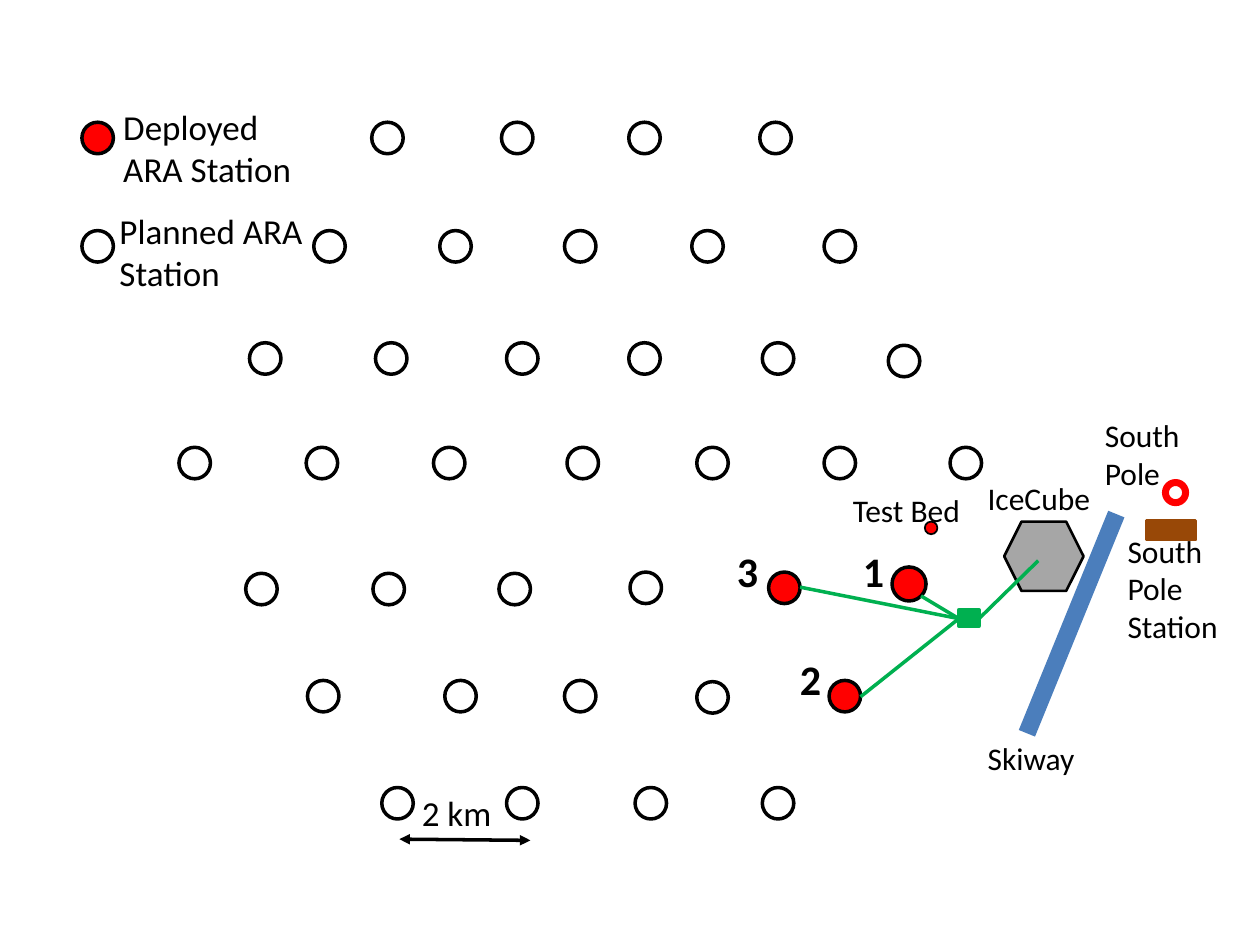
from dataclasses import dataclass

from lxml.etree import SubElement
from pptx import Presentation
from pptx.dml.color import RGBColor
from pptx.enum.shapes import MSO_CONNECTOR, MSO_SHAPE
from pptx.enum.text import MSO_AUTO_SIZE
from pptx.oxml.ns import qn
from pptx.slide import Slide
from pptx.util import Inches, Pt

BLACK = RGBColor(0x00, 0x00, 0x00)
RED = RGBColor(0xFF, 0x00, 0x00)
GREEN = RGBColor(0x00, 0xB0, 0x50)
BLUE = RGBColor(0x4B, 0x7E, 0xBC)
GREY = RGBColor(0xA6, 0xA6, 0xA6)
BROWN = RGBColor(0x98, 0x48, 0x07)

FONT = "Calibri"
STATION_SIZE = 0.25


@dataclass(frozen=True)
class StationRow:
    top: float
    lefts: tuple[float, ...]


@dataclass(frozen=True)
class Marker:
    kind: MSO_SHAPE
    left: float
    top: float
    width: float
    height: float
    fill: RGBColor | None = None
    line: RGBColor = BLACK
    weight: float = 2


@dataclass(frozen=True)
class Link:
    start: tuple[float, float]
    end: tuple[float, float]
    color: RGBColor = GREEN
    weight: float = 2
    arrows: bool = False


@dataclass(frozen=True)
class Label:
    text: str
    left: float
    top: float
    width: float
    height: float
    size: int = 18
    bold: bool = False


PLANNED_ROWS = (
    StationRow(0.97, (2.95, 3.98, 4.99, 6.03)),
    StationRow(1.83, (0.65, 2.49, 3.49, 4.48, 5.49, 6.54)),
    StationRow(2.72, (1.98, 2.98, 4.02, 4.99, 6.05)),
    StationRow(2.74, (7.05,)),
    StationRow(3.55, (1.42, 2.43, 3.44, 4.5, 5.53, 6.54, 7.54)),
    StationRow(4.55, (1.95, 2.96, 3.96)),
    StationRow(4.54, (5,)),
    StationRow(5.4, (2.44, 3.53, 4.48)),
    StationRow(5.41, (5.53,)),
    StationRow(6.25, (3.03, 4.02, 5.04, 6.05)),
)
DEPLOYED_ROWS = (
    StationRow(0.97, (0.65,)),
    StationRow(4.54, (6.1,)),
    StationRow(5.4, (6.58,)),
)

SKIWAY = Link((8.86, 4.08), (8.15, 5.82), BLUE, 10)
SCALE_BAR = Link((3.17, 6.66), (4.21, 6.67), BLACK, arrows=True)
HUB = (7.61, 4.91)
CABLES = (
    Link((8.24, 4.45), (7.77, 4.91)),
    Link(HUB, (7.31, 4.73)),
    Link(HUB, (6.35, 4.66)),
    Link(HUB, (6.83, 5.53)),
)

LANDMARKS = (
    Marker(MSO_SHAPE.OVAL, 7.08, 4.5, 0.27, 0.27, RED),
    Marker(MSO_SHAPE.HEXAGON, 7.97, 4.14, 0.63, 0.55, GREY, weight=1.5),
    Marker(MSO_SHAPE.OVAL, 7.34, 4.14, 0.1, 0.1, RED, weight=1),
    Marker(MSO_SHAPE.RECTANGLE, 7.61, 4.84, 0.16, 0.13, GREEN, GREEN),
    Marker(MSO_SHAPE.RECTANGLE, 9.1, 4.13, 0.39, 0.15, BROWN, BROWN),
    Marker(MSO_SHAPE.OVAL, 9.25, 3.83, 0.16, 0.16, line=RED, weight=4),
)

LABELS = (
    Label("Deployed ARA Station", 0.88, 0.79, 1.8, 0.77, 20),
    Label("Planned ARA Station", 0.85, 1.61, 1.84, 0.77, 20),
    Label("IceCube", 7.74, 3.75, 1.17, 0.4),
    Label("Test Bed", 6.67, 3.85, 1.25, 0.4),
    Label("South Pole", 8.67, 3.25, 0.95, 0.71),
    Label("South Pole Station", 8.85, 4.17, 0.98, 1.01),
    Label("Skiway", 7.74, 5.82, 1.11, 0.4),
    Label("2 km", 3.25, 6.23, 1, 0.44, 20),
    Label("1", 6.75, 4.28, 0.49, 0.5, 24, True),
    Label("2", 6.25, 5.14, 0.39, 0.5, 24, True),
    Label("3", 5.75, 4.28, 0.39, 0.5, 24, True),
)


def draw_marker(slide: Slide, marker: Marker) -> None:
    shape = slide.shapes.add_shape(
        marker.kind, Inches(marker.left), Inches(marker.top),
        Inches(marker.width), Inches(marker.height))
    shape.shadow.inherit = False
    if marker.fill is None:
        shape.fill.background()
    else:
        shape.fill.solid()
        shape.fill.fore_color.rgb = marker.fill
    shape.line.color.rgb = marker.line
    shape.line.width = Pt(marker.weight)


def draw_stations(slide: Slide, rows: tuple[StationRow, ...],
                  fill: RGBColor | None = None) -> None:
    for row in rows:
        for left in row.lefts:
            draw_marker(slide, Marker(MSO_SHAPE.OVAL, left, row.top,
                                      STATION_SIZE, STATION_SIZE, fill))


def draw_link(slide: Slide, link: Link) -> None:
    connector = slide.shapes.add_connector(
        MSO_CONNECTOR.STRAIGHT, *map(Inches, link.start + link.end))
    connector.line.color.rgb = link.color
    connector.line.width = Pt(link.weight)
    if link.arrows:
        outline = connector.line._get_or_add_ln()
        for end in ("a:headEnd", "a:tailEnd"):
            SubElement(outline, qn(end), type="triangle")
    SubElement(connector._element.spPr, qn("a:effectLst"))


def write_text(slide: Slide, text: str, *, left: float, top: float, width: float,
               height: float, size: int, bold: bool) -> None:
    box = slide.shapes.add_textbox(
        Inches(left), Inches(top), Inches(width), Inches(height))
    frame = box.text_frame
    frame.word_wrap = True
    frame.auto_size = MSO_AUTO_SIZE.SHAPE_TO_FIT_TEXT
    span = frame.paragraphs[0].add_run()
    span.text = text
    span.font.name = FONT
    span.font.size = Pt(size)
    span.font.bold = bold
    span.font.color.rgb = BLACK


def main() -> None:
    deck = Presentation()
    deck.slide_width, deck.slide_height = Inches(10), Inches(7.5)
    slide = deck.slides.add_slide(deck.slide_layouts[6])

    draw_stations(slide, PLANNED_ROWS)
    draw_stations(slide, DEPLOYED_ROWS, RED)
    draw_link(slide, SKIWAY)
    for marker in LANDMARKS:
        draw_marker(slide, marker)
    for link in (*CABLES, SCALE_BAR):
        draw_link(slide, link)
    for label in LABELS:
        write_text(slide, label.text, left=label.left, top=label.top,
                   width=label.width, height=label.height,
                   size=label.size, bold=label.bold)

    deck.save("out.pptx")


if __name__ == "__main__":
    main()
